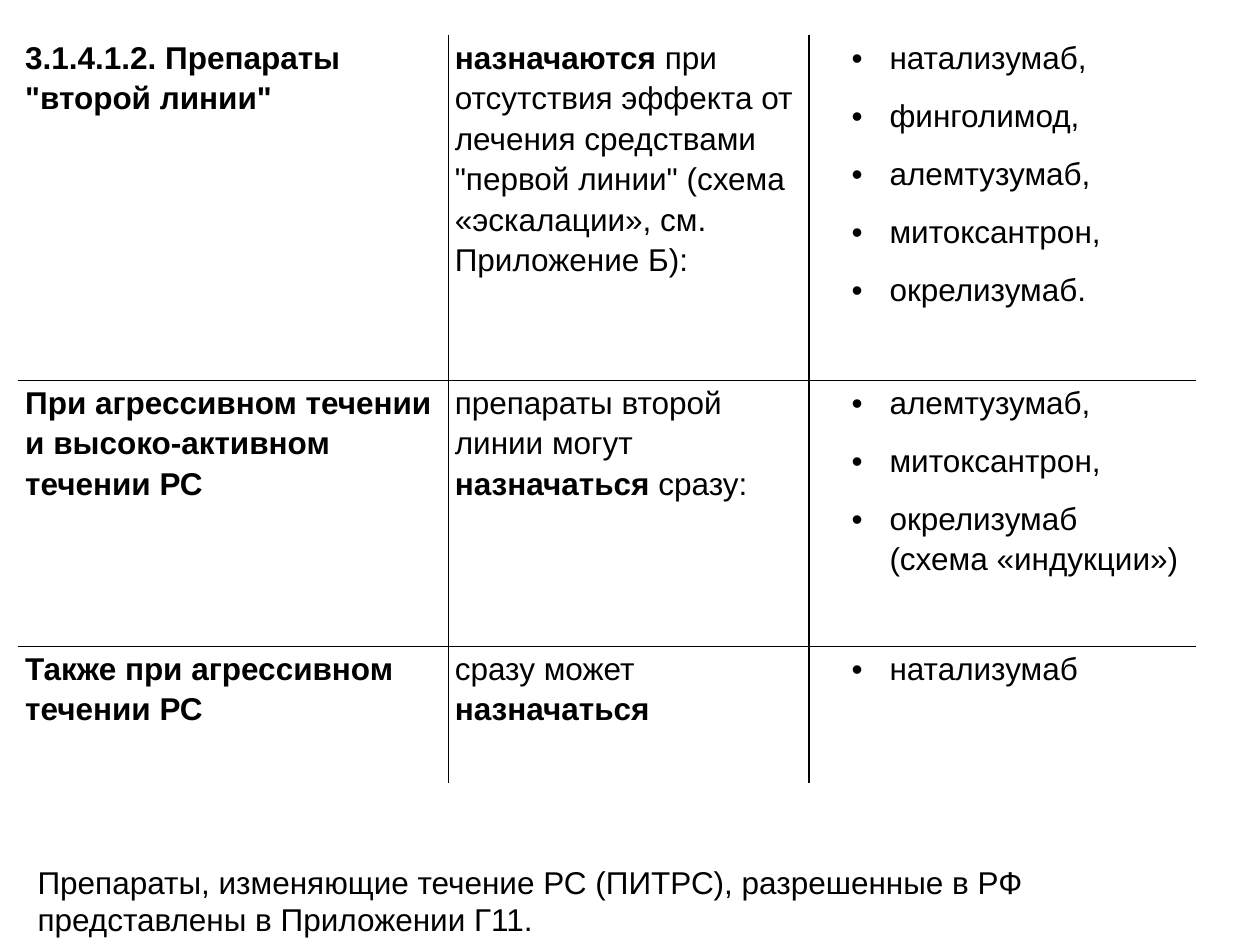
"""Build a slide with a table of second-line MS drugs and a closing note."""
from lxml.etree import SubElement
from pptx import Presentation
from pptx.dml.color import RGBColor
from pptx.enum.text import MSO_ANCHOR, MSO_AUTO_SIZE
from pptx.oxml.ns import qn
from pptx.util import Inches, Pt

BLACK = RGBColor(0, 0, 0)
WHITE = RGBColor(255, 255, 255)
FONT = {"name": "Arial", "size": Pt(18)}
CELL_SPACING = {"line_spacing": 1.15, "space_after": Pt(10)}
CELL_FORMAT = {"margin_left": Inches(0.05), "margin_right": Inches(0.05),
               "margin_top": 0, "margin_bottom": 0}
BULLET_INDENT = {"marL": str(Inches(0.59)), "indent": str(Inches(-0.3))}
COLUMN_WIDTHS = [3.41, 2.86, 3.07]
ROW_HEIGHTS = [2.74, 2.11, 1.09]

ROWS = [
    ('3.1.4.1.2. Препараты "второй линии"',
     [("назначаются ", True),
      ('при отсутствия эффекта от лечения средствами "первой линии" '
       "(схема «эскалации», см. Приложение Б):", False)],
     ["натализумаб,", "финголимод,", "алемтузумаб,", "митоксантрон,", "окрелизумаб."]),
    ("При агрессивном течении и высоко-активном течении РС",
     [("препараты второй линии могут ", False), ("назначаться", True), (" сразу:", False)],
     ["алемтузумаб,", "митоксантрон,", "окрелизумаб \n(схема «индукции»)"]),
    ("Также при агрессивном течении РС",
     [("сразу может ", False), ("назначаться", True)],
     ["натализумаб"]),
]
NOTE = ("Препараты, изменяющие течение РС (ПИТРС), разрешенные в РФ "
        "представлены в Приложении Г11.")


def apply(target, values):
    for name, value in values.items():
        setattr(target, name, value)


def write(para, spans):
    for text, bold in spans:
        for index, line in enumerate(text.split("\n")):
            if index:
                para.add_line_break()
            span = para.add_run()
            span.text = line
            apply(span.font, {**FONT, "bold": bold})
            span.font.color.rgb = BLACK


def add_bullet(para):
    properties = para._p.get_or_add_pPr()
    for name, value in BULLET_INDENT.items():
        properties.set(name, value)
    SubElement(properties, qn("a:buFont"), typeface="Arial")
    SubElement(properties, qn("a:buChar"), char="•")


def fill_cell(cell, paragraphs, bulleted):
    apply(cell, CELL_FORMAT)
    for index, spans in enumerate(paragraphs):
        frame = cell.text_frame
        para = frame.add_paragraph() if index else frame.paragraphs[0]
        if bulleted:
            add_bullet(para)
        apply(para, CELL_SPACING)
        write(para, spans)


def set_borders(cell, row, column):
    outer = {"L": column == 0, "R": column == len(COLUMN_WIDTHS) - 1,
             "T": row == 0, "B": row == len(ROW_HEIGHTS) - 1}
    properties = cell._tc.get_or_add_tcPr()
    for side, is_outer in outer.items():
        line = SubElement(properties, qn(f"a:ln{side}"), w=str(Pt(1)))
        fill = SubElement(line, qn("a:solidFill"))
        SubElement(fill, qn("a:srgbClr"), val=str(WHITE if is_outer else BLACK))
    cell.fill.background()


def add_drug_table(page):
    table = page.shapes.add_table(
        len(ROW_HEIGHTS), len(COLUMN_WIDTHS), Inches(0.15), Inches(0.28),
        Inches(sum(COLUMN_WIDTHS)), Inches(sum(ROW_HEIGHTS))).table
    apply(table, {"first_row": False, "horz_banding": False})
    for column, width in zip(table.columns, COLUMN_WIDTHS):
        column.width = Inches(width)
    for row, height in zip(table.rows, ROW_HEIGHTS):
        row.height = Inches(height)
    for row, (heading, usage, drugs) in enumerate(ROWS):
        contents = [[[(heading, True)]], [usage], [[(drug, False)] for drug in drugs]]
        for column, paragraphs in enumerate(contents):
            cell = table.cell(row, column)
            fill_cell(cell, paragraphs, bulleted=column == 2)
            set_borders(cell, row, column)


def add_note(page):
    box = page.shapes.add_textbox(Inches(0.2), Inches(6.79), Inches(9.61), Inches(0.71))
    apply(box.text_frame, {"word_wrap": True, "vertical_anchor": MSO_ANCHOR.MIDDLE,
                           "auto_size": MSO_AUTO_SIZE.SHAPE_TO_FIT_TEXT})
    write(box.text_frame.paragraphs[0], [(NOTE, False)])


def main():
    deck = Presentation()
    apply(deck, {"slide_width": Inches(10), "slide_height": Inches(7.5)})
    page = deck.slides.add_slide(deck.slide_layouts[6])
    add_drug_table(page)
    add_note(page)
    deck.save("out.pptx")


if __name__ == "__main__":
    main()
